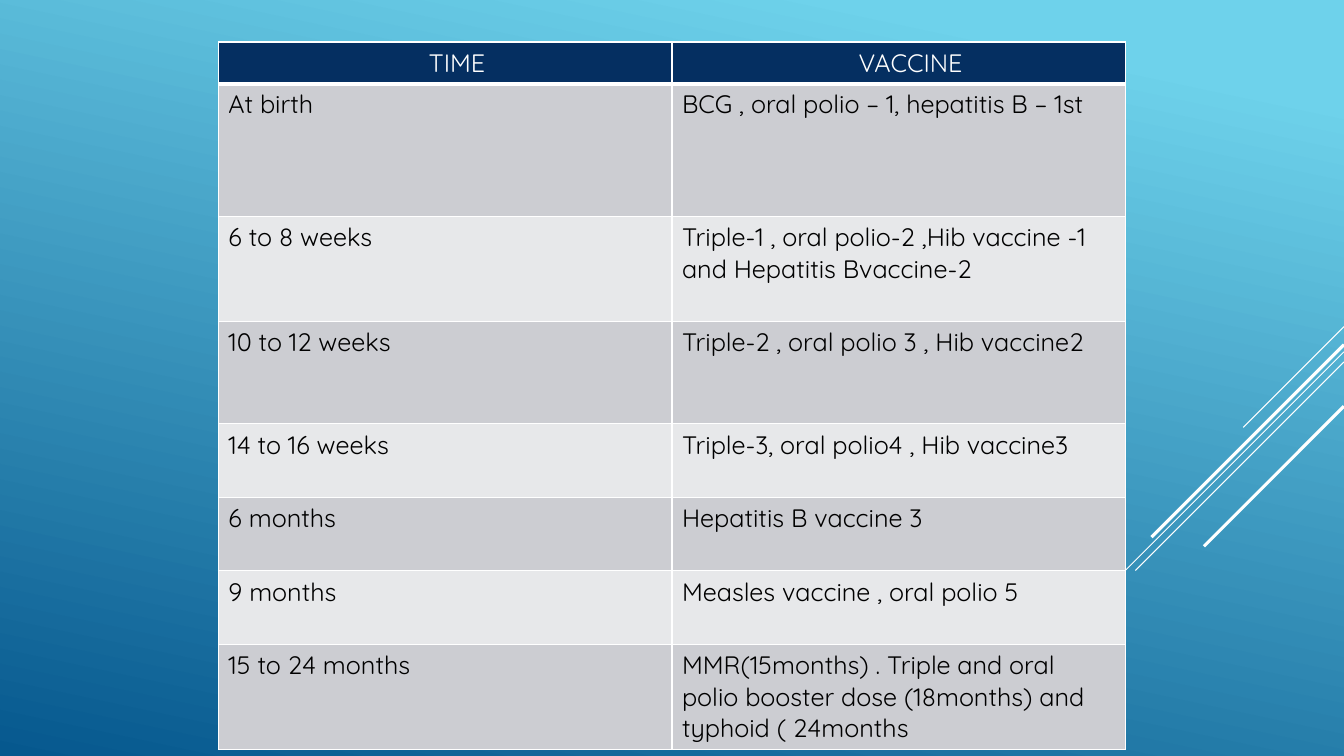
from dataclasses import dataclass

from lxml import etree
from pptx import Presentation
from pptx.dml.color import RGBColor
from pptx.enum import shapes, text
from pptx.oxml import ns
from pptx.util import Pt


@dataclass(frozen=True)
class Theme:
    font: str = "Quicksand"
    size: int = 18
    white: str = "FFFFFF"
    ink: str = "000000"
    head: str = "052F61"
    bands: tuple = ("CCCDD2", "E7E8EA")
    sky: tuple = ((0.1, "6ED2EB"), (1, "06588E"))
    angle: int = 258
    thin: float = 0.75
    bold: float = 2.25
    rule: int = 1
    base: int = 3


WIDTH, HEIGHT = 960, 540

# Start height on the right edge, run, and whether the stripe is bold
STRIPES = [
    (233.3, 72, False),
    (251.3, 234.7, False),
    (258.5, 149, False),
    (246.2, 137.5, True),
    (290.2, 100, True),
]

HEADS = ("TIME", "VACCINE")
DOSES = [
    (95, "At birth", "BCG , oral polio – 1, hepatitis B – 1st"),
    (75, "6 to 8 weeks",
     "Triple-1 , oral polio-2 ,Hib vaccine -1 and Hepatitis Bvaccine-2"),
    (73, "10 to 12 weeks", "Triple-2 , oral polio 3 , Hib vaccine2"),
    (52.5, "14 to 16 weeks", "Triple-3, oral polio4 , Hib vaccine3"),
    (52.5, "6 months", "Hepatitis B vaccine 3"),
    (52.5, "9 months", "Measles vaccine , oral polio 5"),
    (75, "15 to 24 months",
     "MMR(15months) . Triple and oral polio booster dose (18months) "
     "and typhoid ( 24months"),
]


class Deck:
    def __init__(self, theme):
        self.theme = theme
        self.prs = Presentation()
        self.prs.slide_width, self.prs.slide_height = Pt(WIDTH), Pt(HEIGHT)
        self.slide = self.prs.slides.add_slide(self.prs.slide_layouts[6])

    def sky(self):
        fill = self.slide.background.fill
        fill.gradient()
        fill.gradient_angle = self.theme.angle
        for stop, (place, color) in zip(fill.gradient_stops, self.theme.sky):
            stop.position = place
            stop.color.rgb = RGBColor.from_string(color)

    def stripe(self, top, run, bold):
        line = self.slide.shapes.add_connector(
            shapes.MSO_CONNECTOR.STRAIGHT,
            Pt(WIDTH), Pt(top), Pt(WIDTH - run), Pt(top + run))
        line.line.color.rgb = RGBColor.from_string(self.theme.white)
        line.line.width = Pt(self.theme.bold if bold else self.theme.thin)
        etree.SubElement(line._element.spPr, ns.qn("a:effectLst"))

    def edges(self, cell, base):
        props = cell._tc.get_or_add_tcPr()
        for spot, side in enumerate("LRTB"):
            wide = base if side == "B" else self.theme.rule
            edge = etree.Element(ns.qn(f"a:ln{side}"), w=str(Pt(wide)))
            fill = etree.SubElement(edge, ns.qn("a:solidFill"))
            etree.SubElement(fill, ns.qn("a:srgbClr"), val=self.theme.white)
            props.insert(spot, edge)

    def cell(self, cell, words, fill, ink, head=False):
        cell.text_frame.text = words
        cell.fill.solid()
        cell.fill.fore_color.rgb = RGBColor.from_string(fill)
        self.edges(cell, self.theme.base if head else self.theme.rule)
        # Headings sit slightly right of the column centre
        cell.margin_left = Pt(24 if head else 7.2)
        cell.margin_right = Pt(7.2)
        cell.margin_top = cell.margin_bottom = Pt(3.6)
        para = cell.text_frame.paragraphs[0]
        para.alignment = text.PP_ALIGN.CENTER if head else text.PP_ALIGN.LEFT
        for run in para.runs:
            run.font.name = self.theme.font
            run.font.size = Pt(self.theme.size)
            run.font.bold = False
            run.font.color.rgb = RGBColor.from_string(ink)

    def table(self, left, top, col, first, heads, rows):
        tall = first + sum(row[0] for row in rows)
        grid = self.slide.shapes.add_table(
            len(rows) + 1, len(heads), Pt(left), Pt(top),
            Pt(col * len(heads)), Pt(tall)).table
        grid.horz_banding = False
        for row, high in zip(grid.rows, [first] + [row[0] for row in rows]):
            row.height = Pt(high)
        for c, words in enumerate(heads):
            self.cell(grid.cell(0, c), words, self.theme.head,
                      self.theme.white, head=True)
        for r, (_, *parts) in enumerate(rows):
            for c, words in enumerate(parts):
                self.cell(grid.cell(r + 1, c), words,
                          self.theme.bands[r % 2], self.theme.ink)


def main():
    deck = Deck(Theme())

    # Backdrop
    deck.sky()
    for stripe in STRIPES:
        deck.stripe(*stripe)

    # Vaccine schedule
    deck.table(156, 30, 324, 29.3, HEADS, DOSES)

    deck.prs.save("out.pptx")


if __name__ == "__main__":
    main()
